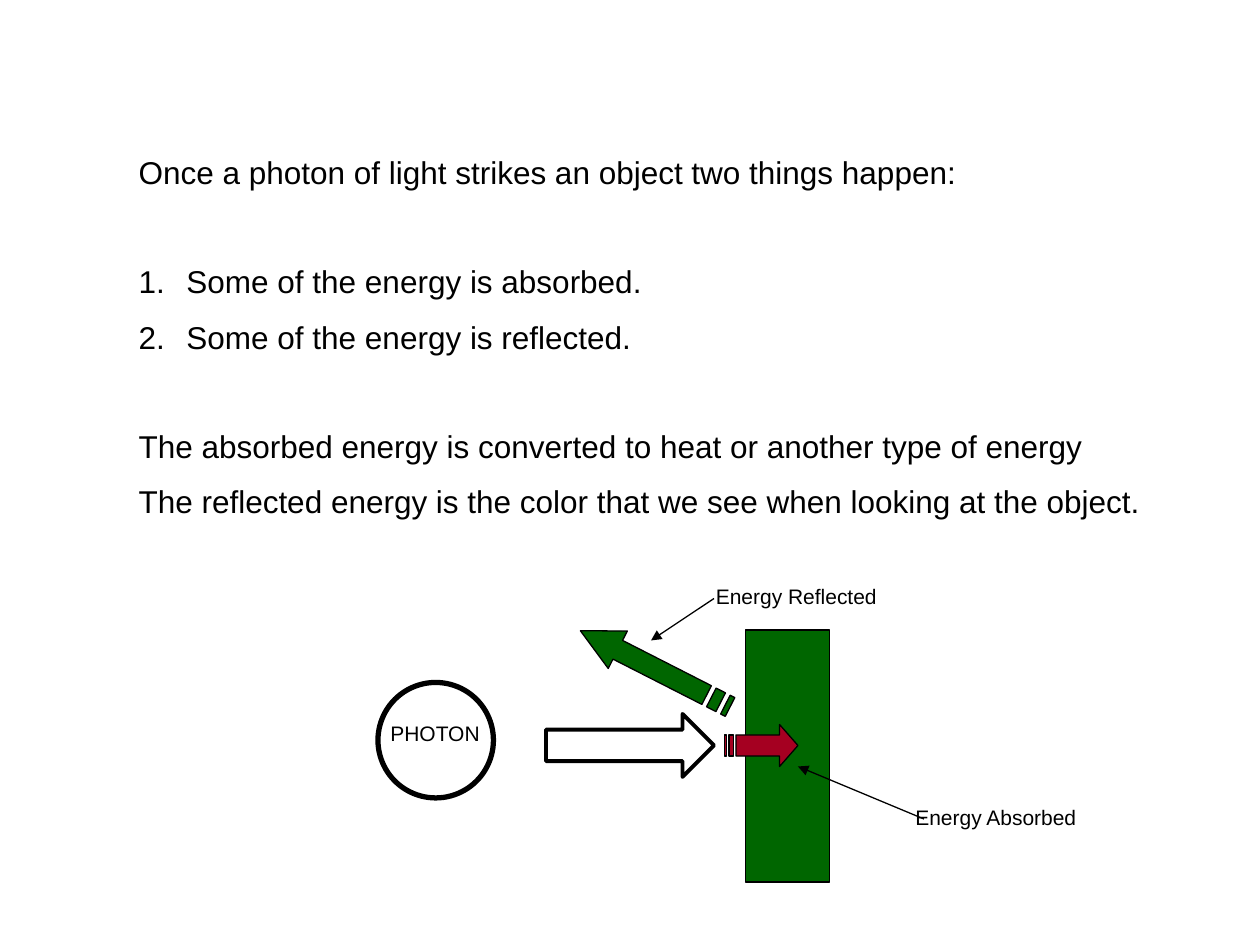
from lxml.etree import SubElement
from pptx import Presentation
from pptx.dml.color import RGBColor
from pptx.enum.shapes import MSO_CONNECTOR, MSO_SHAPE
from pptx.enum.text import MSO_ANCHOR, MSO_AUTO_SIZE, PP_ALIGN
from pptx.oxml.ns import qn
from pptx.util import Emu, Inches, Pt

BLACK = RGBColor(0x00, 0x00, 0x00)
WHITE = RGBColor(0xFF, 0xFF, 0xFF)
GREEN = RGBColor(0x00, 0x66, 0x00)
RED = RGBColor(0xA5, 0x00, 0x21)
FONT = "Arial"
COLUMNS, ROWS = 120, 90  # grid of the slide, twelve cells to the inch
CELL = Inches(1) // 12
LINE_GAP, BLOCK_GAP = 10, 40.7  # points before a paragraph

# text, points before it, numbered
STATEMENTS = [
    ("Once a photon of light strikes an object two things happen:", 0, False),
    ("Some of the energy is absorbed.", BLOCK_GAP, True),
    ("Some of the energy is reflected.", LINE_GAP, True),
    ("The absorbed energy is converted to heat or another type of energy", BLOCK_GAP, False),
    ("The reflected energy is the color that we see when looking at the object.", LINE_GAP, False),
]

# Outlines on a grid of 32 columns and 4 rows
ARROW_BODY = [(24, 0), (24, 1), (5, 1), (5, 3), (24, 3), (24, 4), (32, 2)]
STRIPES = [[(left, 1), (left, 3), (right, 3), (right, 1)] for left, right in [(2, 4), (0, 1)]]


def cells(*values):
    return [Emu(round(value * CELL)) for value in values]


def format_font(paragraph, size):
    for run in paragraph.runs:
        run.font.name = FONT
        run.font.size = Pt(size)
        run.font.color.rgb = BLACK


def format_shape(shape, fill, line_width):
    shape.shadow.inherit = False
    shape.fill.solid()
    shape.fill.fore_color.rgb = fill
    shape.line.color.rgb = BLACK
    shape.line.width = Pt(line_width)


def fill_body(body):
    body.left, body.top, body.width, body.height = cells(12, 14, 99, 37.3)
    frame = body.text_frame
    frame.text = "\n".join(text for text, _, _ in STATEMENTS)
    frame.word_wrap = True
    frame.auto_size = MSO_AUTO_SIZE.NONE
    frame.vertical_anchor = MSO_ANCHOR.TOP
    for paragraph, (_, gap, numbered) in zip(frame.paragraphs, STATEMENTS):
        paragraph.alignment = PP_ALIGN.LEFT
        paragraph.space_before = Pt(gap)
        format_font(paragraph, 18)
        properties = paragraph._p.get_or_add_pPr()
        properties.set("marL", str(Inches(0.38)))
        properties.set("indent", str(-Inches(0.38)))
        if numbered:
            SubElement(properties, qn("a:buFont"), typeface=FONT)
            SubElement(properties, qn("a:buAutoNum"), type="arabicPeriod")
        else:
            SubElement(properties, qn("a:buNone"))


def add_label(slide, text, left, top, width):
    frame = slide.shapes.add_textbox(*cells(left, top, width, 3.6)).text_frame
    frame.word_wrap = True
    frame.text = text
    format_font(frame.paragraphs[0], 12)


def add_preset(slide, kind, box, fill, line_width):
    shape = slide.shapes.add_shape(kind, *cells(*box))
    format_shape(shape, fill, line_width)


def add_striped_arrow(slide, box, fill, rotation=0):
    """Draw a right arrow with two stripes at its tail, then turn it."""
    left, top, width, height = cells(*box)
    builder = slide.shapes.build_freeform(*ARROW_BODY[0], scale=(width / 32, height / 4))
    builder.add_line_segments(ARROW_BODY[1:], close=True)
    for stripe in STRIPES:
        builder.move_to(*stripe[0])
        builder.add_line_segments(stripe[1:], close=True)
    shape = builder.convert_to_shape(left, top)
    shape.rotation = rotation
    format_shape(shape, fill, 0.75)


def add_pointer(slide, start, end):
    connector = slide.shapes.add_connector(MSO_CONNECTOR.STRAIGHT, *cells(*start, *end))
    connector.line.color.rgb = BLACK
    connector.line.width = Pt(0.75)
    SubElement(connector.line._get_or_add_ln(), qn("a:tailEnd"), type="triangle")
    SubElement(connector._element.spPr, qn("a:effectLst"))


def main():
    presentation = Presentation()
    presentation.slide_width = COLUMNS * CELL
    presentation.slide_height = ROWS * CELL
    slide = presentation.slides.add_slide(presentation.slide_layouts[1])
    title = slide.shapes.title._element
    title.getparent().remove(title)
    fill_body(slide.placeholders[1])

    add_preset(slide, MSO_SHAPE.OVAL, (36, 65, 11, 11), WHITE, 3)
    add_preset(slide, MSO_SHAPE.RIGHT_ARROW, (52, 68, 16, 6), WHITE, 2.25)
    add_preset(slide, MSO_SHAPE.RECTANGLE, (71, 60, 8, 24), GREEN, 0.75)
    add_striped_arrow(slide, (69, 69, 7, 4), RED)
    add_striped_arrow(slide, (54.4, 61.7, 16, 4), GREEN, rotation=207)

    add_label(slide, "PHOTON", 36, 68, 12)
    add_pointer(slide, (88, 78), (76, 73))
    add_label(slide, "Energy Absorbed", 86, 76, 18)
    add_pointer(slide, (68, 57), (62, 61))
    add_label(slide, "Energy Reflected", 67, 55, 18)
    presentation.save("out.pptx")


if __name__ == "__main__":
    main()
